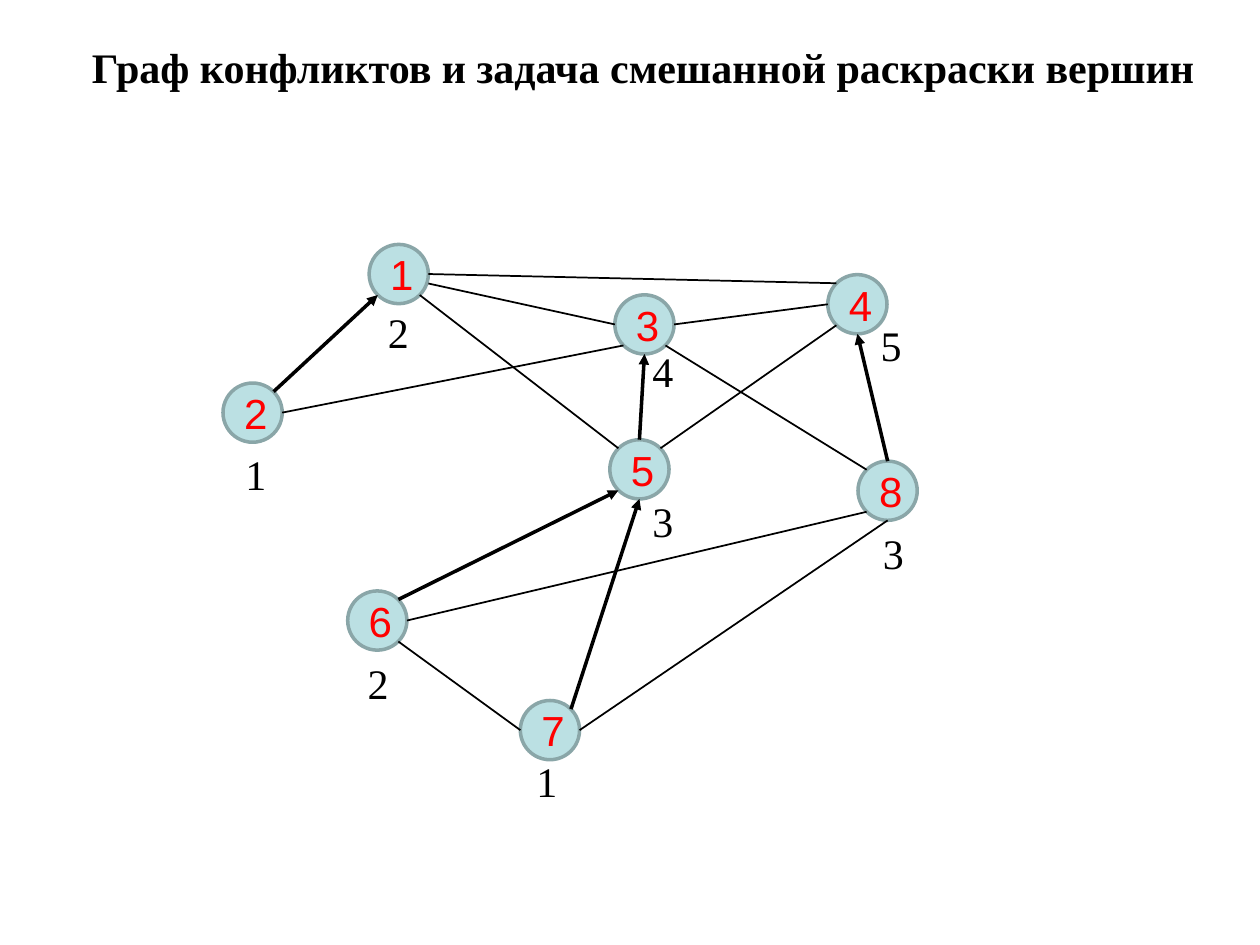
import pptx
import pptx.util
import pptx.dml.color
import pptx.enum.shapes
import pptx.enum.text
import pptx.oxml
import pptx.oxml.ns
import lxml.etree

Inches = pptx.util.Inches
Pt = pptx.util.Pt
RGBColor = pptx.dml.color.RGBColor
CENTER = pptx.enum.text.PP_ALIGN.CENTER

BLACK = RGBColor(0x00, 0x00, 0x00)
RED = RGBColor(0xFF, 0x00, 0x00)
NODE_FILL = RGBColor(0xBB, 0xE0, 0xE3)
NODE_LINE = RGBColor(0x8A, 0xA6, 0xA8)

NODE_SIZE = 0.47
DIAGONAL = 0.71
SIDES = {
    "top": (0, -1), "bottom": (0, 1), "left": (-1, 0), "right": (1, 0),
    "top left": (-DIAGONAL, -DIAGONAL), "top right": (DIAGONAL, -DIAGONAL),
    "bottom left": (-DIAGONAL, DIAGONAL), "bottom right": (DIAGONAL, DIAGONAL),
    "lower right": (1, 0.32),
}

nodes = {
    "2": (1.77, 3.04), "7": (4.13, 5.56), "3": (4.88, 2.34), "4": (6.57, 2.18),
    "6": (2.76, 4.69), "1": (2.93, 1.94), "5": (4.84, 3.49), "8": (6.81, 3.66),
}

edges = [
    ("4", "left", "3", "right", False),
    ("1", "bottom left", "2", "top right", True),
    ("3", "bottom", "5", "top", True),
    ("4", "bottom", "8", "top", True),
    ("1", "lower right", "3", "left", False),
    ("6", "bottom right", "7", "left", False),
    ("5", "bottom left", "6", "top right", True),
    ("5", "bottom", "7", "top right", True),
    ("1", "right", "4", "top left", False),
    ("2", "right", "3", "bottom left", False),
    ("1", "bottom right", "5", "top left", False),
    ("3", "bottom right", "8", "top left", False),
    ("5", "top right", "4", "bottom left", False),
    ("6", "right", "8", "bottom left", False),
    ("7", "right", "8", "bottom", False),
]

colour_labels = [
    ("1", 4.16, 5.95), ("1", 1.85, 3.51), ("2", 2.82, 5.17), ("2", 2.98, 2.38),
    ("3", 6.91, 4.14), ("3", 5.08, 3.88), ("4", 5.08, 2.69), ("5", 6.89, 2.49),
]


def add_text(page, text, left, top, width, bold=False):
    box = page.shapes.add_textbox(Inches(left), Inches(top), Inches(width), Inches(0.5))
    box.text_frame.word_wrap = False
    box.text_frame.auto_size = pptx.enum.text.MSO_AUTO_SIZE.SHAPE_TO_FIT_TEXT
    para = box.text_frame.paragraphs[0]
    para.text = text
    para.font.name = "Times New Roman"
    para.font.size = Pt(24)
    para.font.bold = bold
    para.font.color.rgb = BLACK
    return para


def anchor(node, side):
    left, top = nodes[node]
    across, down = SIDES[side]
    radius = NODE_SIZE / 2
    return Inches(left + radius * (1 + across)), Inches(top + radius * (1 + down))


deck = pptx.Presentation()
deck.slide_width = Inches(10)
deck.slide_height = Inches(7.5)
page = deck.slides.add_slide(deck.slide_layouts[6])

title = add_text(page, "Граф конфликтов и задача смешанной раскраски вершин", 0.47, 0.28, 9.27, bold=True)
title.alignment = CENTER

for name, (left, top) in nodes.items():
    circle = page.shapes.add_shape(
        pptx.enum.shapes.MSO_SHAPE.OVAL,
        Inches(left), Inches(top), Inches(NODE_SIZE), Inches(NODE_SIZE))
    circle.shadow.inherit = False
    circle.fill.solid()
    circle.fill.fore_color.rgb = NODE_FILL
    circle.line.color.rgb = NODE_LINE
    circle.line.width = Pt(2)
    circle.text_frame.vertical_anchor = pptx.enum.text.MSO_ANCHOR.MIDDLE
    para = circle.text_frame.paragraphs[0]
    para.text = name
    para.alignment = CENTER
    para.font.name = "Arial"
    para.font.size = Pt(24)
    para.font.color.rgb = RED

for start, start_side, end, end_side, directed in edges:
    edge = page.shapes.add_connector(
        pptx.enum.shapes.MSO_CONNECTOR.STRAIGHT,
        *anchor(start, start_side), *anchor(end, end_side))
    edge.line.color.rgb = BLACK
    edge.line.width = Pt(2 if directed else 1)
    if directed:
        head = lxml.etree.SubElement(edge.line._get_or_add_ln(), pptx.oxml.ns.qn("a:headEnd"))
        head.set("type", "triangle")
    lxml.etree.SubElement(edge._element.spPr, pptx.oxml.ns.qn("a:effectLst"))

for text, left, top in colour_labels:
    add_text(page, text, left, top, 0.37)

deck.save("out.pptx")
